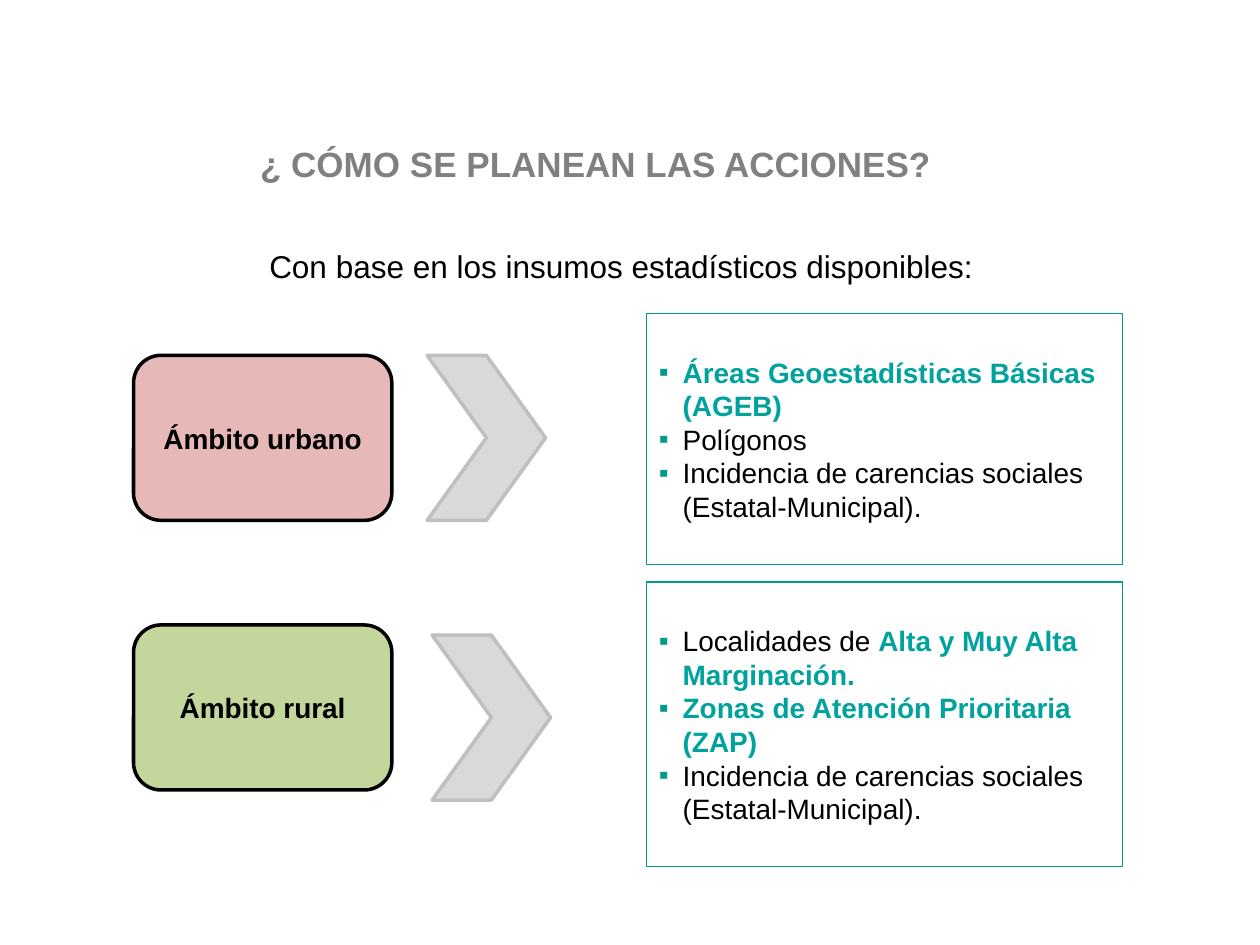
import pptx
import pptx.util
import pptx.dml.color
import pptx.enum.shapes
import pptx.enum.text
import pptx.oxml
import pptx.oxml.ns

Inches = pptx.util.Inches
SHAPE = pptx.enum.shapes.MSO_SHAPE
ANCHOR = pptx.enum.text.MSO_ANCHOR
CENTER = pptx.enum.text.PP_ALIGN.CENTER
LEFT = pptx.enum.text.PP_ALIGN.LEFT

BLACK, GRAY, TEAL, FRAME = "000000", "808080", "00A29E", "009B89"

# Content: each bullet is a list of (text, highlighted) spans
TITLE = "¿ CÓMO SE PLANEAN LAS ACCIONES? "
SUBTITLE = "Con base en los insumos estadísticos disponibles:"
INCIDENCE = [("Incidencia de carencias sociales (Estatal-Municipal).", False)]
SCOPES = [
    {"name": "Ámbito urbano", "fill": "E6B9B8", "top": 2.82,
     "arrow": (3.39, 2.82), "panel": (2.49, 1.99),
     "bullets": [[("Áreas Geoestadísticas Básicas (AGEB)", True)],
                 [("Polígonos", False)],
                 INCIDENCE]},
    {"name": "Ámbito rural", "fill": "C3D69B", "top": 4.96,
     "arrow": (3.43, 5.04), "panel": (4.62, 2.26),
     "bullets": [[("Localidades de ", False), ("Alta y Muy Alta Marginación.", True)],
                 [("Zonas de Atención Prioritaria (ZAP)", True)],
                 INCIDENCE]},
]


def rgb(value):
    return pptx.dml.color.RGBColor.from_string(value)


def style(span, size, color, bold=False):
    span.font.name = "Arial"
    span.font.size = pptx.util.Pt(size)
    span.font.bold = bold
    span.font.color.rgb = rgb(color)


def add_label(box, text, size, color, bold, anchor):
    frame = box.text_frame
    frame.word_wrap = True
    frame.vertical_anchor = anchor
    frame.text = text
    para = frame.paragraphs[0]
    para.alignment = CENTER
    style(para.runs[0], size, color, bold)


def add_block(page, kind, place, fill, line, width):
    block = page.shapes.add_shape(kind, *map(Inches, place))
    block.shadow.inherit = False
    if fill:
        block.fill.solid()
        block.fill.fore_color.rgb = rgb(fill)
    else:
        block.fill.background()
    block.line.color.rgb = rgb(line)
    block.line.width = pptx.util.Pt(width)
    return block


def add_bullet(para):
    props = para._p.get_or_add_pPr()
    props.set("marL", str(Inches(0.19)))
    props.set("indent", str(Inches(-0.19)))
    namespace = pptx.oxml.ns.nsdecls("a")
    for xml in (f'<a:buClr {namespace}><a:srgbClr val="{FRAME}"/></a:buClr>',
                f'<a:buFont {namespace} typeface="Arial"/>',
                f'<a:buChar {namespace} char="▪"/>'):
        props.append(pptx.oxml.parse_xml(xml))


def add_bullets(panel, bullets):
    frame = panel.text_frame
    frame.word_wrap = True
    frame.vertical_anchor = ANCHOR.MIDDLE
    for index, spans in enumerate(bullets):
        para = frame.add_paragraph() if index else frame.paragraphs[0]
        para.alignment = LEFT
        add_bullet(para)
        for text, highlighted in spans:
            span = para.add_run()
            span.text = text
            style(span, 16, TEAL if highlighted else BLACK, highlighted)


def main():
    deck = pptx.Presentation()
    deck.slide_width, deck.slide_height = Inches(10), Inches(7.5)
    page = deck.slides.add_slide(deck.slide_layouts[6])

    # Headings
    title = page.shapes.add_textbox(*map(Inches, (1.3, 0.92, 6.93, 0.75)))
    add_label(title, TITLE, 20, GRAY, True, ANCHOR.MIDDLE)
    subtitle = page.shapes.add_textbox(*map(Inches, (0.22, 1.91, 9.42, 0.52)))
    add_label(subtitle, SUBTITLE, 18, BLACK, False, ANCHOR.TOP)

    # One row per scope: name, arrow, list of inputs
    for scope in SCOPES:
        name = add_block(page, SHAPE.ROUNDED_RECTANGLE, (1.06, scope["top"], 2.05, 1.31),
                         scope["fill"], BLACK, 2)
        add_label(name, scope["name"], 16, BLACK, True, ANCHOR.MIDDLE)
        add_block(page, SHAPE.CHEVRON, (*scope["arrow"], 0.94, 1.31), "D9D9D9", "BFBFBF", 2)
        top, height = scope["panel"]
        panel = add_block(page, SHAPE.RECTANGLE, (5.13, top, 3.78, height), None, FRAME, 0.75)
        add_bullets(panel, scope["bullets"])

    deck.save("out.pptx")


if __name__ == "__main__":
    main()
